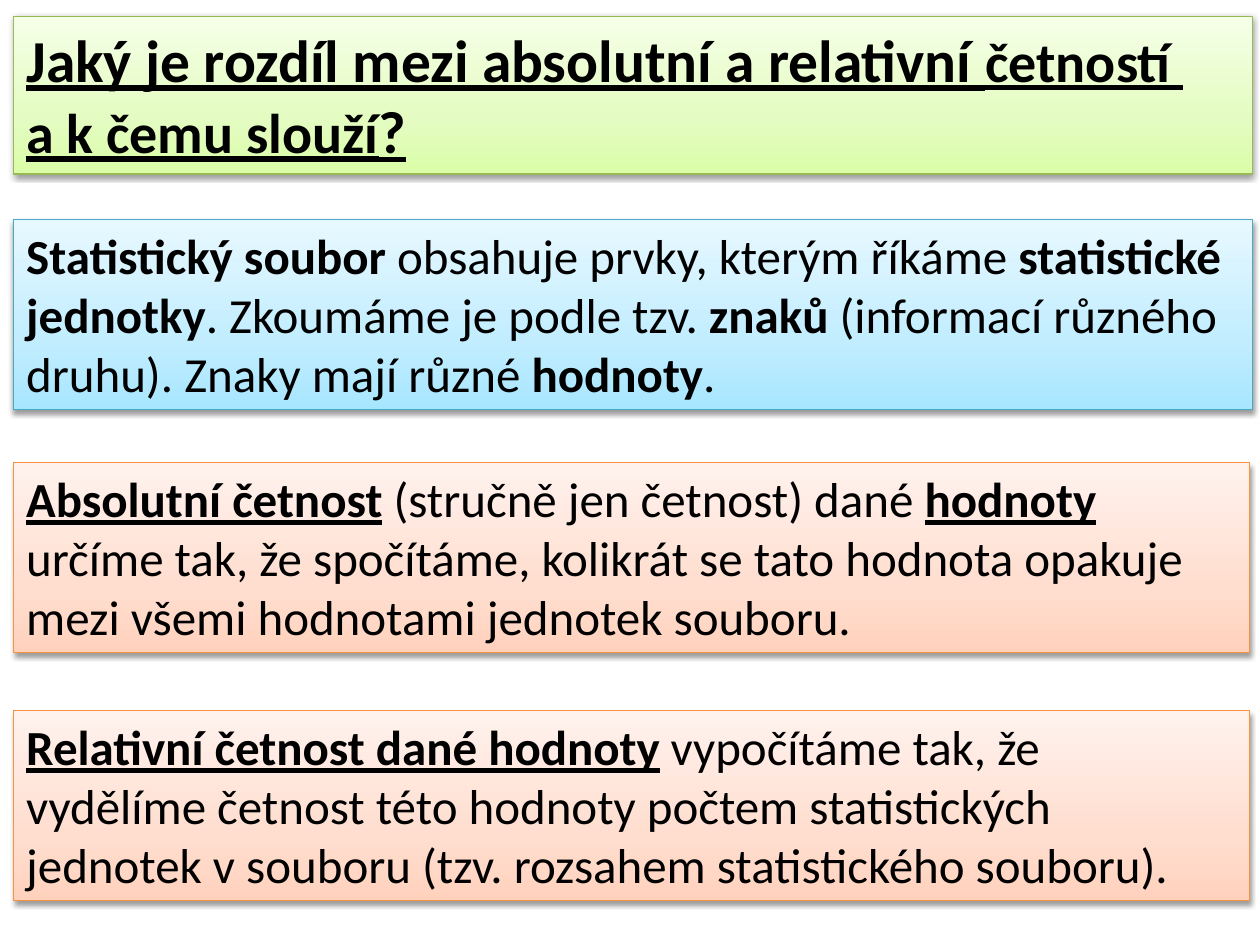
from copy import deepcopy

from lxml import etree
from pptx import Presentation
from pptx.dml.color import RGBColor
from pptx.enum.text import MSO_ANCHOR, MSO_AUTO_SIZE, PP_ALIGN
from pptx.oxml import parse_xml
from pptx.oxml.ns import nsdecls, qn
from pptx.util import Inches, Pt

LEFT = 0.11
BODY_SIZE = 28
BODY_HEIGHT = 1.51

# Gradient stops from bottom to top, then the border
GREEN = (["DAFDA7", "E4FCC2", "F5FFE7"], "98B955")
BLUE = (["A7E6FF", "C1EDFF", "E7F8FF"], "46AAC5")
ORANGE = (["FFD2BD", "FFDED0", "FFF2ED"], "F69240")
STOP_POSITIONS = [0, 35, 100]

# A run is (text, style): "b" is bold, "u" is underlined
QUESTION = [
    [("Jaký je rozdíl mezi absolutní a relativní ", 34), ("četností ", 32)],
    [("a k čemu slouží", 32), ("?", 34)],
]
POPULATION = [
    [("Statistický soubor", "b"), (" obsahuje prvky, kterým říkáme ", ""),
     ("statistické", "b")],
    [("jednotky", "b"), (". Zkoumáme je podle tzv. ", ""), ("znaků", "b"),
     (" (informací různého", "")],
    [("druhu). Znaky mají různé ", ""), ("hodnoty", "b"), (".", "")],
]
ABSOLUTE = [
    [("Absolutní četnost", "bu"), (" (stručně jen četnost) dané ", ""),
     ("hodnoty", "bu"), (" ", "")],
    [("určíme tak, že spočítáme, kolikrát se tato hodnota opakuje", "")],
    [("mezi všemi hodnotami jednotek souboru.", "")],
]
RELATIVE = [
    [("Relativní četnost dané hodnoty", "bu"), (" vypočítáme tak, že", "")],
    [("vydělíme četnost této hodnoty počtem statistických", "")],
    [("jednotek v souboru (tzv. rozsahem statistického souboru).", "")],
]
PANELS = [
    (1.74, 9.83, BLUE, POPULATION),
    (3.67, 9.81, ORANGE, ABSOLUTE),
    (5.64, 9.81, ORANGE, RELATIVE),
]


def rgb(color):
    return RGBColor.from_string(color)


def fill_gradient(panel, colors):
    panel.fill.gradient()
    panel.fill.gradient_angle = 90
    stop_list = panel._element.spPr.find(".//" + qn("a:gsLst"))
    stop_list.insert(1, deepcopy(stop_list[0]))
    for stop, position in zip(stop_list, STOP_POSITIONS):
        stop.set("pos", str(position * 1000))
        for old_color in list(stop):
            stop.remove(old_color)
    for stop, color in zip(stop_list, colors):
        etree.SubElement(stop, qn("a:srgbClr"), val=color)


def add_shadow(panel):
    panel._element.spPr.append(parse_xml(
        f'<a:effectLst {nsdecls("a")}>'
        '<a:outerShdw blurRad="40000" dist="20000" dir="5400000" rotWithShape="0">'
        '<a:srgbClr val="000000"><a:alpha val="38000"/></a:srgbClr>'
        '</a:outerShdw></a:effectLst>'))


def style_panel(panel, palette):
    colors, border = palette
    fill_gradient(panel, colors)
    panel.line.color.rgb = rgb(border)
    panel.line.width = Pt(0.75)
    add_shadow(panel)
    frame = panel.text_frame
    frame.word_wrap = True
    frame.auto_size = MSO_AUTO_SIZE.SHAPE_TO_FIT_TEXT
    frame.vertical_anchor = MSO_ANCHOR.TOP


def add_paragraphs(frame, lines):
    """Write each line as a paragraph; yield it with its runs and their styles."""
    for index, line in enumerate(lines):
        paragraph = frame.add_paragraph() if index else frame.paragraphs[0]
        paragraph.alignment = PP_ALIGN.LEFT
        paragraph.font.name = "Calibri"
        paragraph.font.color.rgb = rgb("000000")
        styled_runs = []
        for text, style in line:
            run = paragraph.add_run()
            run.text = text
            styled_runs.append((run, style))
        yield paragraph, styled_runs


def set_question(title):
    title.left, title.top = Inches(LEFT), Inches(0.13)
    title.width, title.height = Inches(9.83), Inches(1.25)
    style_panel(title, GREEN)
    for paragraph, styled_runs in add_paragraphs(title.text_frame, QUESTION):
        paragraph.font.bold = True
        paragraph.font.underline = True
        for run, size in styled_runs:
            run.font.size = Pt(size)


def add_panel(slide, top, width, palette, lines):
    panel = slide.shapes.add_textbox(
        Inches(LEFT), Inches(top), Inches(width), Inches(BODY_HEIGHT))
    style_panel(panel, palette)
    for paragraph, styled_runs in add_paragraphs(panel.text_frame, lines):
        paragraph.font.size = Pt(BODY_SIZE)
        for run, style in styled_runs:
            run.font.bold = "b" in style
            run.font.underline = "u" in style


def main():
    presentation = Presentation()
    presentation.slide_width = Inches(10)
    presentation.slide_height = Inches(7.5)
    title_only = presentation.slide_layouts[5]
    slide = presentation.slides.add_slide(title_only)
    set_question(slide.shapes.title)
    for panel in PANELS:
        add_panel(slide, *panel)
    presentation.save("out.pptx")


if __name__ == "__main__":
    main()
